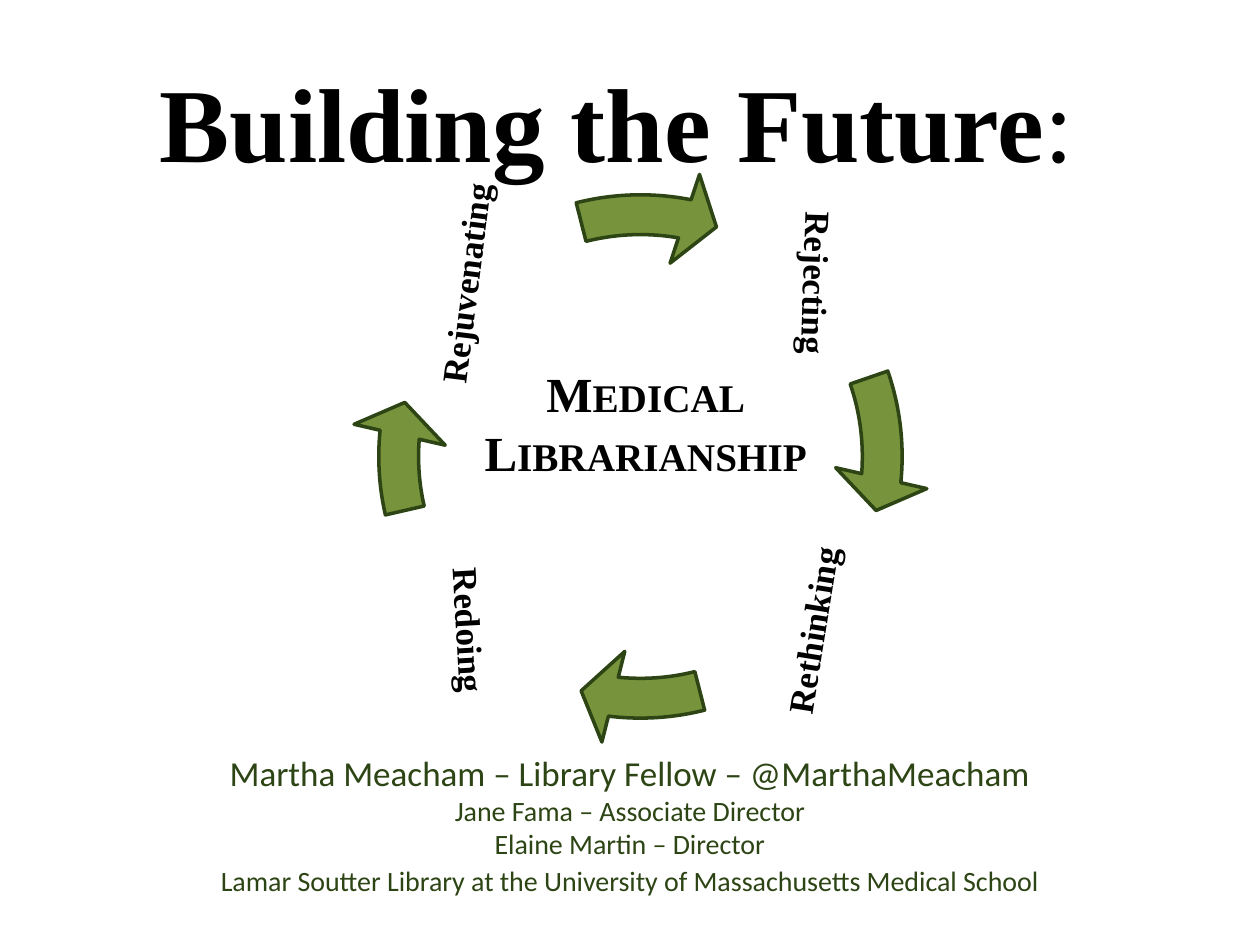
from dataclasses import dataclass

from pptx import Presentation
from pptx.dml.color import RGBColor
from pptx.enum.shapes import MSO_SHAPE
from pptx.enum.text import MSO_ANCHOR, MSO_AUTO_SIZE, PP_ALIGN
from pptx.util import Emu, Pt

EMU_PER_PX = 914400 / 126
BLACK = RGBColor(0x00, 0x00, 0x00)
GREEN = RGBColor(0x77, 0x93, 0x3C)
DARK_GREEN = RGBColor(0x2D, 0x44, 0x14)
SERIF = "Times New Roman"
SANS = "Calibri"


def px(length: int) -> Emu:
    return Emu(round(length * EMU_PER_PX))


@dataclass(frozen=True)
class Box:
    left: int
    top: int
    width: int
    height: int

    def emu(self) -> tuple:
        return px(self.left), px(self.top), px(self.width), px(self.height)


@dataclass(frozen=True)
class Stage:
    text: str
    box: Box
    rotation: float


@dataclass(frozen=True)
class Arc:
    """Head and tail angles of a cycle arrow, in degrees."""
    head: float
    tail: float


@dataclass(frozen=True)
class Credit:
    text: str
    size: int
    space_before: int = 0


CYCLE_BOX = Box(352, 168, 577, 577)
STAGES = [
    Stage("Rejecting", Box(718, 190, 193, 186), 91.9),
    Stage("Rethinking", Box(701, 512, 227, 237), 279.2),
    Stage("Redoing", Box(354, 512, 227, 237), 86.7),
    Stage("Rejuvenating", Box(354, 165, 227, 237), 277.2),
]
ARCS = [Arc(5.15, 340.95), Arc(96.44, 75.8), Arc(185.15, 167.09), Arc(280.57, 255.8)]
CREDITS = [
    Credit("Martha Meacham – Library Fellow – @MarthaMeacham", 20),
    Credit("Jane Fama – Associate Director", 16),
    Credit("Elaine Martin – Director", 16),
    Credit("Lamar Soutter Library at the University of Massachusetts Medical School", 16, 2),
]


def place(shape, box: Box) -> None:
    shape.left, shape.top, shape.width, shape.height = box.emu()


def style(paragraph, size: int, name: str, color: RGBColor, bold: bool = False) -> None:
    paragraph.alignment = PP_ALIGN.CENTER
    paragraph.font.size = Pt(size)
    paragraph.font.name = name
    paragraph.font.bold = bold
    paragraph.font.color.rgb = color


def add_stage(shapes, stage: Stage) -> None:
    shape = shapes.add_textbox(*stage.box.emu())
    shape.rotation = stage.rotation
    frame = shape.text_frame
    frame.word_wrap = True
    frame.vertical_anchor = MSO_ANCHOR.MIDDLE
    frame.margin_left = frame.margin_right = px(4)
    frame.margin_top = frame.margin_bottom = px(4)
    paragraph = frame.paragraphs[0]
    paragraph.text = stage.text
    paragraph.line_spacing = 0.9
    paragraph.space_after = Pt(7)
    style(paragraph, 20, SERIF, BLACK, bold=True)


def add_arrow(shapes, arc: Arc) -> None:
    shape = shapes.add_shape(MSO_SHAPE.CIRCULAR_ARROW, *CYCLE_BOX.emu())
    shape.shadow.inherit = False
    # Angles are stored in 1/60000 degree, adjustments in 1/100000
    values = (0.069, 4.657, arc.head * 0.6, arc.tail * 0.6, 0.081)
    for index, value in enumerate(values):
        shape.adjustments[index] = value
    shape.fill.solid()
    shape.fill.fore_color.rgb = GREEN
    shape.line.color.rgb = DARK_GREEN
    shape.line.width = Pt(2)


def fill_title(title) -> None:
    place(title, Box(0, 32, 1260, 242))
    frame = title.text_frame
    frame.auto_size = MSO_AUTO_SIZE.NONE
    frame.vertical_anchor = MSO_ANCHOR.TOP
    frame.margin_top = px(25)
    frame.margin_right = px(39)
    paragraph = frame.paragraphs[0]
    style(paragraph, 60, SERIF, BLACK)
    for text, bold in (("Building the Future", True), (":", False)):
        run = paragraph.add_run()
        run.text = text
        run.font.bold = bold


def fill_credits(body) -> None:
    place(body, Box(0, 745, 1260, 199))
    frame = body.text_frame
    frame.auto_size = MSO_AUTO_SIZE.NONE
    frame.vertical_anchor = MSO_ANCHOR.TOP
    for index, credit in enumerate(CREDITS):
        paragraph = frame.add_paragraph() if index else frame.paragraphs[0]
        paragraph.text = credit.text
        paragraph.space_before = Pt(credit.space_before)
        style(paragraph, credit.size, SANS, DARK_GREEN)


def add_center(shapes) -> None:
    frame = shapes.add_textbox(*Box(462, 357, 368, 131).emu()).text_frame
    frame.word_wrap = True
    paragraph = frame.paragraphs[0]
    run = paragraph.add_run()
    run.text = "Medical Librarianship"
    run.font._element.set("cap", "small")
    style(paragraph, 28, SERIF, BLACK, bold=True)


def main() -> None:
    presentation = Presentation()
    presentation.slide_width, presentation.slide_height = px(1260), px(945)
    slide = presentation.slides.add_slide(presentation.slide_layouts[0])

    # Title and credits
    fill_title(slide.shapes.title)
    fill_credits(slide.placeholders[1])

    # Cycle of stages and arrows
    cycle = slide.shapes.add_group_shape()
    for stage, arc in zip(STAGES, ARCS):
        add_stage(cycle.shapes, stage)
        add_arrow(cycle.shapes, arc)

    # Topic in the middle of the cycle
    add_center(slide.shapes)

    presentation.save("out.pptx")


if __name__ == "__main__":
    main()
